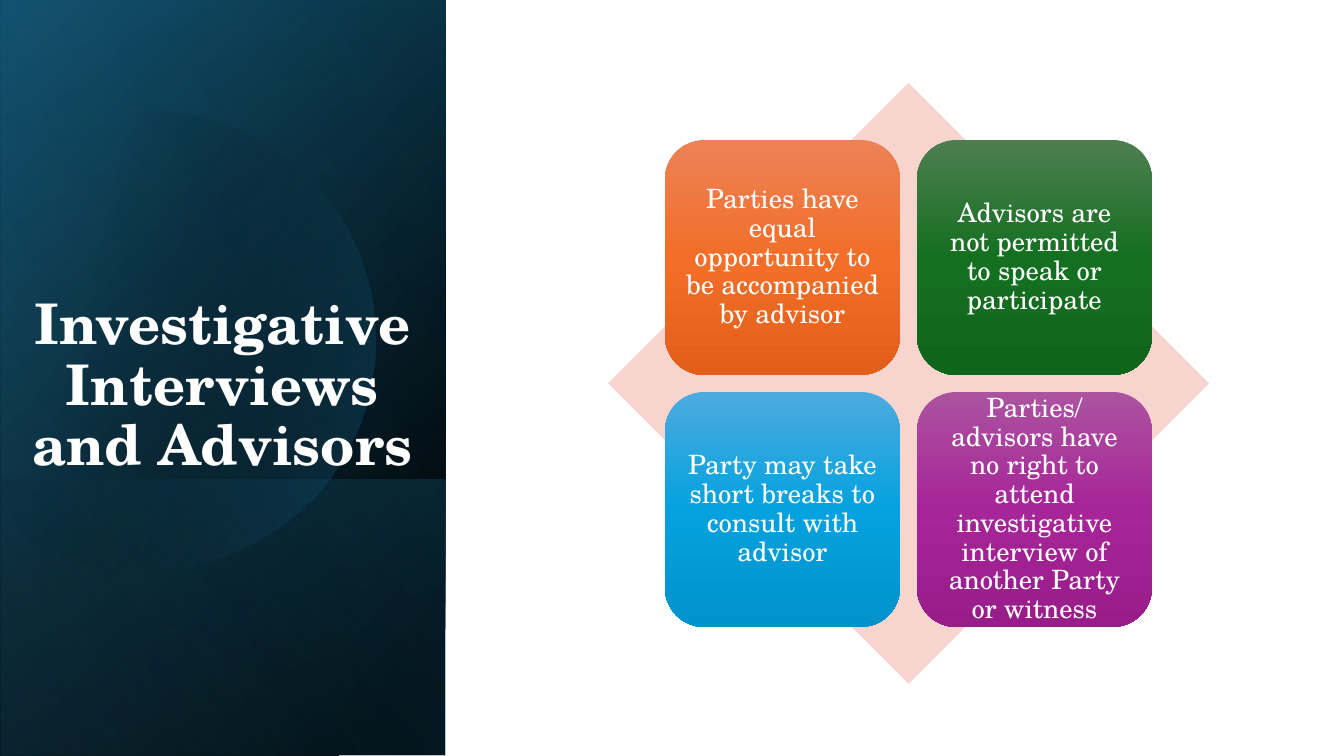
from lxml.etree import SubElement
from pptx import Presentation
from pptx.dml.color import RGBColor
from pptx.enum.shapes import MSO_SHAPE
from pptx.enum.text import MSO_ANCHOR, MSO_AUTO_SIZE, PP_ALIGN
from pptx.oxml.ns import qn
from pptx.util import Pt

PX = 914400 / 100.8
FONT = "TeX Gyre Schola"

WHITE = RGBColor(0xFF, 0xFF, 0xFF)
BLACK = RGBColor(0x00, 0x00, 0x00)
NAVY = RGBColor(0x10, 0x48, 0x62)
TEAL = RGBColor(0x15, 0x60, 0x82)
SKY = RGBColor(0x46, 0xB1, 0xE1)
PINK = RGBColor(0xF7, 0xD5, 0xCE)
ORANGES = [RGBColor(0xED, 0x82, 0x57), RGBColor(0xF2, 0x6E, 0x29), RGBColor(0xE2, 0x5F, 0x1A)]
GREENS = [RGBColor(0x4D, 0x7E, 0x50), RGBColor(0x15, 0x6F, 0x21), RGBColor(0x0F, 0x66, 0x1B)]
BLUES = [RGBColor(0x4C, 0xAA, 0xDF), RGBColor(0x05, 0xA2, 0xDF), RGBColor(0x00, 0x92, 0xCB)]
PURPLES = [RGBColor(0xAC, 0x53, 0xA0), RGBColor(0xA6, 0x25, 0x98), RGBColor(0x99, 0x1C, 0x8B)]

TITLE = "Investigative Interviews and Advisors"
CARDS = [
    ("Parties have equal opportunity to be accompanied by advisor", ORANGES),
    ("Advisors are not permitted to speak or participate", GREENS),
    ("Party may take short breaks to consult with advisor", BLUES),
    ("Parties/advisors have no right to attend investigative interview "
     "of another Party or witness", PURPLES),
]

# Panel layers: box, gradient stops (position %, colour, opacity %), angle
PANEL = (-155, 155, 756, 445)
LAYERS = [
    (PANEL, [(8, BLACK, 100), (100, NAVY, 100)], 50),
    (PANEL, [(0, BLACK, 0), (99, TEAL, 46)], 30),
    ((85, 395, 276, 445), [(2, TEAL, 29), (100, BLACK, 30)], 130),
]
GLOW = (PANEL, [(0, BLACK, 0), (99, SKY, 11)], 120)

# Disc outline: one point is a line, three points are a curve
DISC_START = (150, 111)
DISC = [
    [(248, 113), (338, 178), (366, 277)],
    [(401, 400), (331, 527), (209, 562)],
    [(132, 585), (53, 566), (-3, 518)],
    [(-15, 507)],
    [(-15, 176)],
    [(0, 162)],
    [(23, 143), (50, 129), (81, 120)],
    [(104, 114), (127, 111), (150, 111)],
]
DISC_STOPS = [(29, BLACK, 0), (100, TEAL, 43)]
DISC_ANGLE = 14

TITLE_BOX = (21, 284, 403, 199)
DIAMOND_BOX = (608, 83, 601, 601)
CARD_LEFT, CARD_TOP, CARD_SIZE, CARD_PITCH, CARD_INSET = 665, 140, 235, 252, 8


def emu(box):
    return [round(v * PX) for v in box]


def plain(sp):
    sp.shadow.inherit = False
    sp.line.fill.background()
    return sp


def gradient(sp, stops, angle):
    """Give a shape a linear gradient, placed right after its geometry."""
    fill = sp.element.spPr.makeelement(qn("a:gradFill"), {"rotWithShape": "1"})
    stop_list = SubElement(fill, qn("a:gsLst"))
    for position, color, opacity in stops:
        stop = SubElement(stop_list, qn("a:gs"), pos=str(position * 1000))
        clr = SubElement(stop, qn("a:srgbClr"), val=str(color))
        if opacity < 100:
            SubElement(clr, qn("a:alpha"), val=str(opacity * 1000))
    SubElement(fill, qn("a:lin"), ang=str(angle * 60000), scaled="0")
    sp.element.spPr.insert(2, fill)


def add_layer(shapes, box, stops, angle):
    sp = plain(shapes.add_shape(MSO_SHAPE.RECTANGLE, *emu(box)))
    sp.rotation = 90
    sp.element.spPr.find(qn("a:xfrm")).set("flipH", "1")
    gradient(sp, stops, angle)


def curve_points(start, c1, c2, end, steps=24):
    for i in range(1, steps + 1):
        t = i / steps
        weights = ((1 - t) ** 3, 3 * t * (1 - t) ** 2, 3 * t * t * (1 - t), t ** 3)
        yield tuple(sum(w * v for w, v in zip(weights, axis))
                    for axis in zip(start, c1, c2, end))


def add_disc(shapes):
    points, last = [], DISC_START
    for segment in DISC:
        points += curve_points(last, *segment) if len(segment) == 3 else segment
        last = segment[-1]
    builder = shapes.build_freeform(*DISC_START, scale=PX)
    builder.add_line_segments(points, close=True)
    gradient(plain(builder.convert_to_shape()), DISC_STOPS, DISC_ANGLE)


def write(sp, text, size, anchor, bold=False):
    tf = sp.text_frame
    tf.text = text
    tf.word_wrap = True
    tf.auto_size = MSO_AUTO_SIZE.NONE
    tf.vertical_anchor = anchor
    p = tf.paragraphs[0]
    p.alignment = PP_ALIGN.CENTER
    p.line_spacing = 0.9
    font = p.runs[0].font
    font.name, font.size, font.bold = FONT, Pt(size), bold
    font.color.rgb = WHITE
    return tf


def add_card(shapes, index, text, colors):
    row, col = divmod(index, 2)
    box = (CARD_LEFT + col * CARD_PITCH, CARD_TOP + row * CARD_PITCH, CARD_SIZE, CARD_SIZE)
    sp = plain(shapes.add_shape(MSO_SHAPE.ROUNDED_RECTANGLE, *emu(box)))
    gradient(sp, [(pos, color, 100) for pos, color in zip((0, 50, 100), colors)], 90)
    tf = write(sp, text, 19, MSO_ANCHOR.MIDDLE)
    tf.margin_left = tf.margin_right = tf.margin_top = tf.margin_bottom = round(CARD_INSET * PX)


def main():
    prs = Presentation()
    prs.slide_width, prs.slide_height = emu((1344, 756))
    slide = prs.slides.add_slide(prs.slide_layouts[5])
    shapes = slide.shapes

    for layer in LAYERS:
        add_layer(shapes, *layer)
    add_disc(shapes)
    add_layer(shapes, *GLOW)

    title = shapes.title
    title.left, title.top, title.width, title.height = emu(TITLE_BOX)
    write(title, TITLE, 40, MSO_ANCHOR.BOTTOM, bold=True)
    title.element.getparent().append(title.element)  # in front of the panel

    matrix = shapes.add_group_shape().shapes
    diamond = plain(matrix.add_shape(MSO_SHAPE.DIAMOND, *emu(DIAMOND_BOX)))
    diamond.fill.solid()
    diamond.fill.fore_color.rgb = PINK
    for index, (text, colors) in enumerate(CARDS):
        add_card(matrix, index, text, colors)

    prs.save("out.pptx")


if __name__ == "__main__":
    main()
